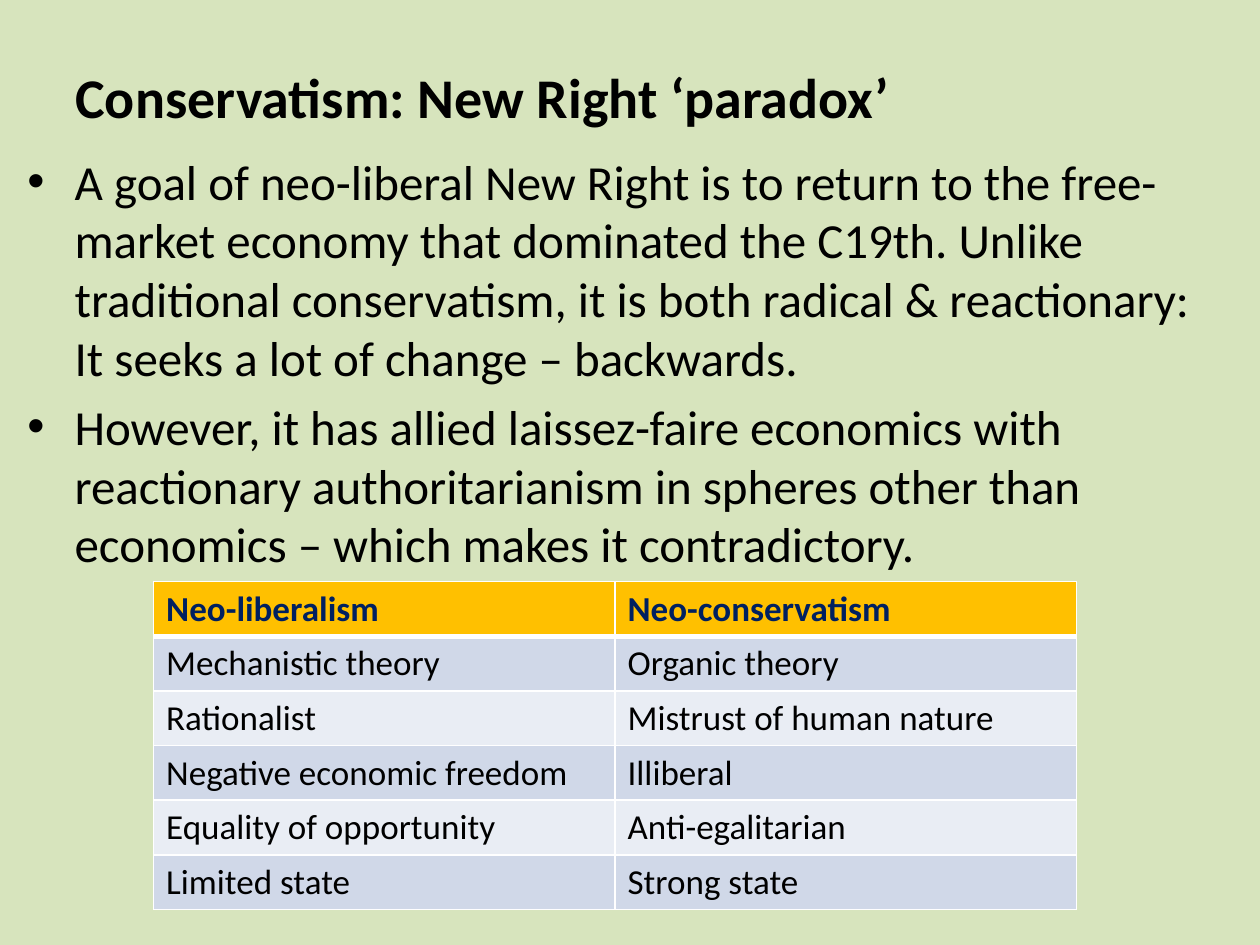
from lxml import etree
from pptx import Presentation
from pptx import util as u
from pptx.dml.color import RGBColor
from pptx.enum import text
from pptx.oxml.ns import qn

Pt = u.Pt
FONT = "Calibri"
COLORS = {"bg": "D7E4BD", "text": "000000", "head_text": "002060", "head": "FFC000",
          "band_dark": "D0D8E8", "band_light": "E9EDF4", "border": "FFFFFF"}

# Content
TITLE = "Conservatism: New Right ‘paradox’"
BULLETS = [
    "A goal of neo-liberal New Right is to return to the free-market economy that "
    "dominated the C19th. Unlike traditional conservatism, it is both radical & "
    "reactionary: It seeks a lot of change – backwards.",
    "However, it has allied laissez-faire economics with reactionary authoritarianism "
    "in spheres other than economics – which makes it contradictory.",
]
ROWS = [
    ("Neo-liberalism", "Neo-conservatism"),
    ("Mechanistic theory", "Organic theory"),
    ("Rationalist", "Mistrust of human nature"),
    ("Negative economic freedom", "Illiberal"),
    ("Equality of opportunity", "Anti-egalitarian"),
    ("Limited state", "Strong state"),
]

# Layout in points: left, top, width, height
TITLE_BOX = (36, 21.6, 648, 67)
BODY_BOX = (8.6, 82.8, 698, 399.6)
TABLE_BOX = (87.8, 332.3, 527.4, 187.2)
INDENT = 27


def color(name):
    return RGBColor.from_string(COLORS[name])


def style(p, size, name="text", bold=False):
    for r in p.runs:
        r.font.name, r.font.size, r.font.bold = FONT, Pt(size), bold
        r.font.color.rgb = color(name)


def add_text(slide, box, lines, anchor):
    tf = slide.shapes.add_textbox(*map(Pt, box)).text_frame
    tf.word_wrap = True
    tf.vertical_anchor = anchor
    tf.text = "\n".join(lines)
    return tf.paragraphs


def add_bullet(p):
    pPr = p._p.get_or_add_pPr()
    pPr.set("marL", str(Pt(INDENT)))
    pPr.set("indent", str(-Pt(INDENT)))
    etree.SubElement(pPr, qn("a:buFont")).set("typeface", "Arial")
    etree.SubElement(pPr, qn("a:buChar")).set("char", "•")


def set_borders(cell, bottom, top):
    tcPr = cell._tc.get_or_add_tcPr()
    widths = {"a:lnL": 1, "a:lnR": 1, "a:lnT": top, "a:lnB": bottom}
    for i, (tag, width) in enumerate(widths.items()):
        ln = etree.Element(qn(tag), w=str(Pt(width)))
        fill = etree.SubElement(ln, qn("a:solidFill"))
        etree.SubElement(fill, qn("a:srgbClr")).set("val", COLORS["border"])
        tcPr.insert(i, ln)


prs = Presentation()
prs.slide_width, prs.slide_height = Pt(720), Pt(540)
slide = prs.slides.add_slide(prs.slide_layouts[6])
slide.background.fill.solid()
slide.background.fill.fore_color.rgb = color("bg")

# Bullets
for p in add_text(slide, BODY_BOX, BULLETS, text.MSO_ANCHOR.TOP):
    p.space_before = Pt(5.6)
    add_bullet(p)
    style(p, 28)

# Title
for p in add_text(slide, TITLE_BOX, [TITLE], text.MSO_ANCHOR.MIDDLE):
    style(p, 32, bold=True)

# Comparison table
table = slide.shapes.add_table(len(ROWS), len(ROWS[0]), *map(Pt, TABLE_BOX)).table
for i, row in enumerate(ROWS):
    head = i == 0
    fill = "head" if head else ("band_light", "band_dark")[i % 2]
    for j, label in enumerate(row):
        cell = table.cell(i, j)
        cell.text = label
        cell.fill.solid()
        cell.fill.fore_color.rgb = color(fill)
        set_borders(cell, bottom=3 if head else 1, top=3 if i == 1 else 1)
        style(cell.text_frame.paragraphs[0], 20, "head_text" if head else "text", head)

prs.save("out.pptx")
